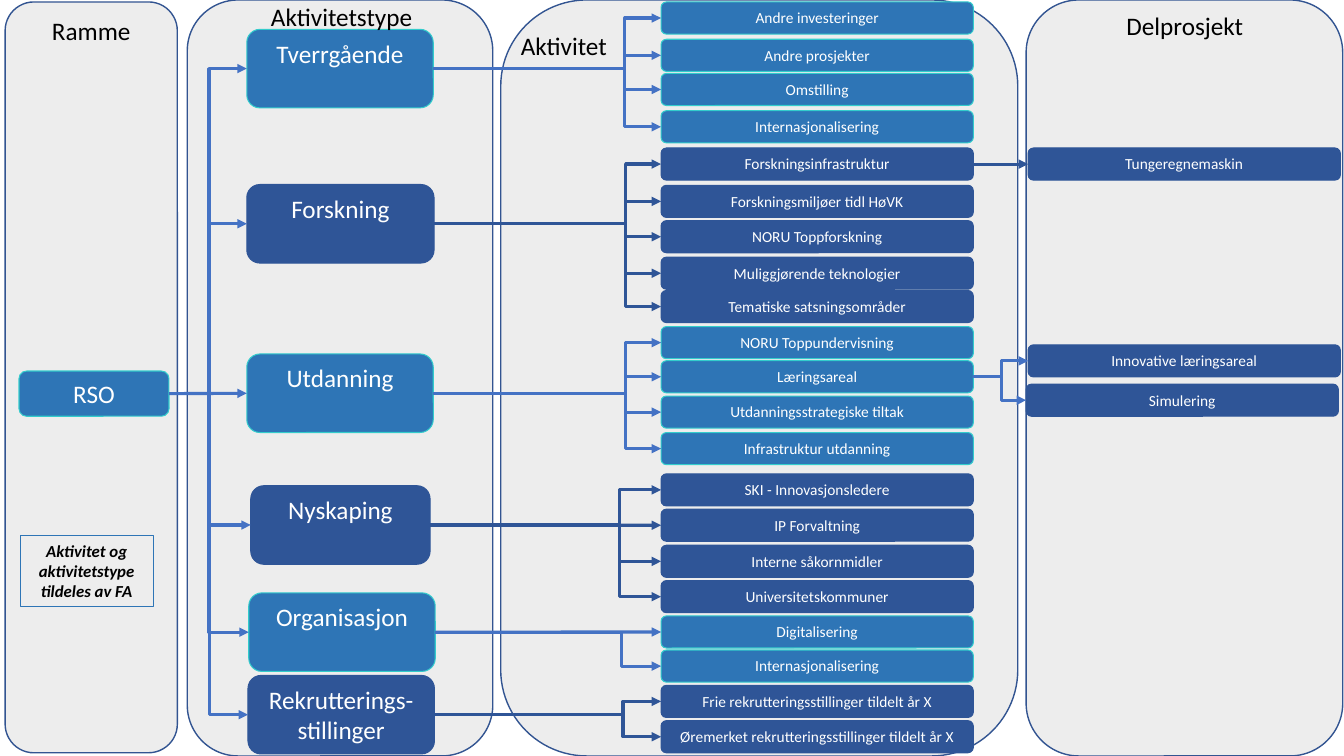
from lxml import etree
from pptx import Presentation
from pptx import util as u
from pptx.dml.color import RGBColor
from pptx.enum import shapes, text
from pptx.oxml import ns

LIGHT = RGBColor(0x2E, 0x75, 0xB6)
TEAL = RGBColor(0x33, 0xCC, 0xCC)
DARK = RGBColor(0x2F, 0x55, 0x97)
BLUE = RGBColor(0x44, 0x72, 0xC4)
GREY = RGBColor(0xED, 0xED, 0xED)
EDGE = RGBColor(0x32, 0x54, 0x91)
WHITE = RGBColor(0xFF, 0xFF, 0xFF)
BLACK = RGBColor(0, 0, 0)
KIND = shapes.MSO_SHAPE

deck = Presentation()
deck.slide_width = u.Cm(33.87)
deck.slide_height = u.Cm(19.05)
slide = deck.slides.add_slide(deck.slide_layouts[6])


def box(area, words, size, fill, edge, ink=WHITE, kind=KIND.ROUNDED_RECTANGLE, width=0.75):
    shape = slide.shapes.add_shape(kind, *[u.Cm(n) for n in area])
    shape.shadow.inherit = False
    if fill is None:
        shape.fill.background()
    else:
        shape.fill.solid()
        shape.fill.fore_color.rgb = fill
    if edge is None:
        shape.line.fill.background()
    else:
        shape.line.color.rgb = edge
        shape.line.width = u.Pt(width)
    if words:
        frame = shape.text_frame
        frame.word_wrap = True
        frame.vertical_anchor = text.MSO_ANCHOR.TOP
        frame.text = words
        para = frame.paragraphs[0]
        para.alignment = text.PP_ALIGN.CENTER
        font = para.runs[0].font
        font.name = "Calibri"
        font.size = u.Pt(size)
        font.color.rgb = ink
    return shape


def join(start, end, bend, ink):
    x1, y1 = start.left + start.width, start.top + start.height // 2
    x2, y2 = end.left, end.top + end.height // 2
    flat = abs(y2 - y1) < u.Cm(0.06)
    kind = shapes.MSO_CONNECTOR.STRAIGHT if flat else shapes.MSO_CONNECTOR.ELBOW
    link = slide.shapes.add_connector(kind, x1, y1, x2, y2)
    link.line.color.rgb = ink
    link.line.width = u.Pt(2.25)
    props = link.line._get_or_add_ln()
    etree.SubElement(props, ns.qn("a:tailEnd"), type="triangle")
    etree.SubElement(link._element.spPr, ns.qn("a:effectLst"))
    if flat:
        link.begin_connect(start, 3)
        link.end_connect(end, 1)
    else:
        ratio = round((u.Cm(bend) - x1) / (x2 - x1) * 100000)
        guides = link._element.spPr.find(ns.qn("a:prstGeom")).get_or_add_avLst()
        etree.SubElement(guides, ns.qn("a:gd"), name="adj1", fmla=f"val {ratio}")


for area in [
    (25.86, 0, 7.98, 19.05),
    (12.62, 0, 13.03, 19.05),
    (4.72, 0, 7.7, 19.05),
    (0.13, 0.05, 4.34, 18.92),
]:
    box(area, "", 18, GREY, EDGE, width=1)

groups = [
    ("Tverrgående", 6.22, 0.74, 4.7, 15.75, [
        ("Andre investeringer", 0.05),
        ("Andre prosjekter", 0.99),
        ("Omstilling", 1.85),
        ("Internasjonalisering", 2.79)]),
    ("Forskning", 6.22, 4.65, 4.72, 15.77, [
        ("Forskningsinfrastruktur", 3.73),
        ("Forskningsmiljøer tidl HøVK", 4.67),
        ("NORU Toppforskning", 5.56),
        ("Muliggjørende teknologier", 6.48),
        ("Tematiske satsningsområder", 7.32)]),
    ("Utdanning", 6.22, 8.92, 4.7, 15.77, [
        ("NORU Toppundervisning", 8.23),
        ("Læringsareal", 9.09),
        ("Utdanningsstrategiske tiltak", 9.98),
        ("Infrastruktur utdanning", 10.9)]),
    ("Nyskaping", 6.32, 12.24, 4.52, 15.62, [
        ("SKI - Innovasjonsledere", 11.94),
        ("IP Forvaltning", 12.83),
        ("Interne såkornmidler", 13.74),
        ("Universitetskommuner", 14.63)]),
    ("Organisasjon", 6.27, 14.94, 4.7, 15.67, [
        ("Digitalisering", 15.52),
        ("Internasjonalisering", 16.38)]),
    ("Rekrutterings-stillinger", 6.25, 17.02, 4.7, 15.7, [
        ("Frie rekrutteringsstillinger tildelt år X", 17.27),
        ("Øremerket rekrutteringsstillinger tildelt år X", 18.16)]),
]
dark = ("Forskning", "Nyskaping", "Rekrutterings-stillinger")

root = box((0.48, 9.35, 3.78, 1.14), "RSO", 18, LIGHT, TEAL)
tasks = {}
for name, left, top, width, bend, items in groups:
    fill, edge, ink = (DARK, DARK, DARK) if name in dark else (LIGHT, TEAL, BLUE)
    group = box((left, top, width, 1.98), name, 18, fill, edge)
    join(root, group, 5.27, BLUE)
    for label, y in items:
        task = box((16.66, y, 7.87, 0.81), label, 11, fill, edge)
        join(group, task, bend, ink)
        tasks[label] = task

for label, left, top, owner, ink in [
    ("Tungeregnemaskin", 25.91, 3.73, "Forskningsinfrastruktur", DARK),
    ("Innovative læringsareal", 25.91, 8.69, "Læringsareal", BLUE),
    ("Simulering", 25.86, 9.68, "Læringsareal", BLUE),
]:
    part = box((left, top, 7.87, 0.81), label, 11, DARK, DARK)
    join(tasks[owner], part, 25.23, ink)

note = box((0.51, 13.49, 3.35, 1.8), "Aktivitet og aktivitetstype tildeles av FA",
           12, None, LIGHT, BLACK, KIND.RECTANGLE)
font = note.text_frame.paragraphs[0].runs[0].font
font.bold = font.italic = True

for label, left, top, width in [
    ("Ramme", 0.74, 0.25, 3.12),
    ("Aktivitetstype", 6.25, -0.1, 4.72),
    ("Aktivitet", 12.65, 0.64, 3.12),
    ("Delprosjekt", 27.84, 0.13, 4.04),
]:
    head = slide.shapes.add_textbox(u.Cm(left), u.Cm(top), u.Cm(width), u.Cm(1.02))
    head.text_frame.word_wrap = True
    para = head.text_frame.paragraphs[0]
    para.text = label
    para.alignment = text.PP_ALIGN.CENTER
    font = para.runs[0].font
    font.name = "Calibri"
    font.size = u.Pt(18)
    font.color.rgb = BLACK

deck.save("out.pptx")
